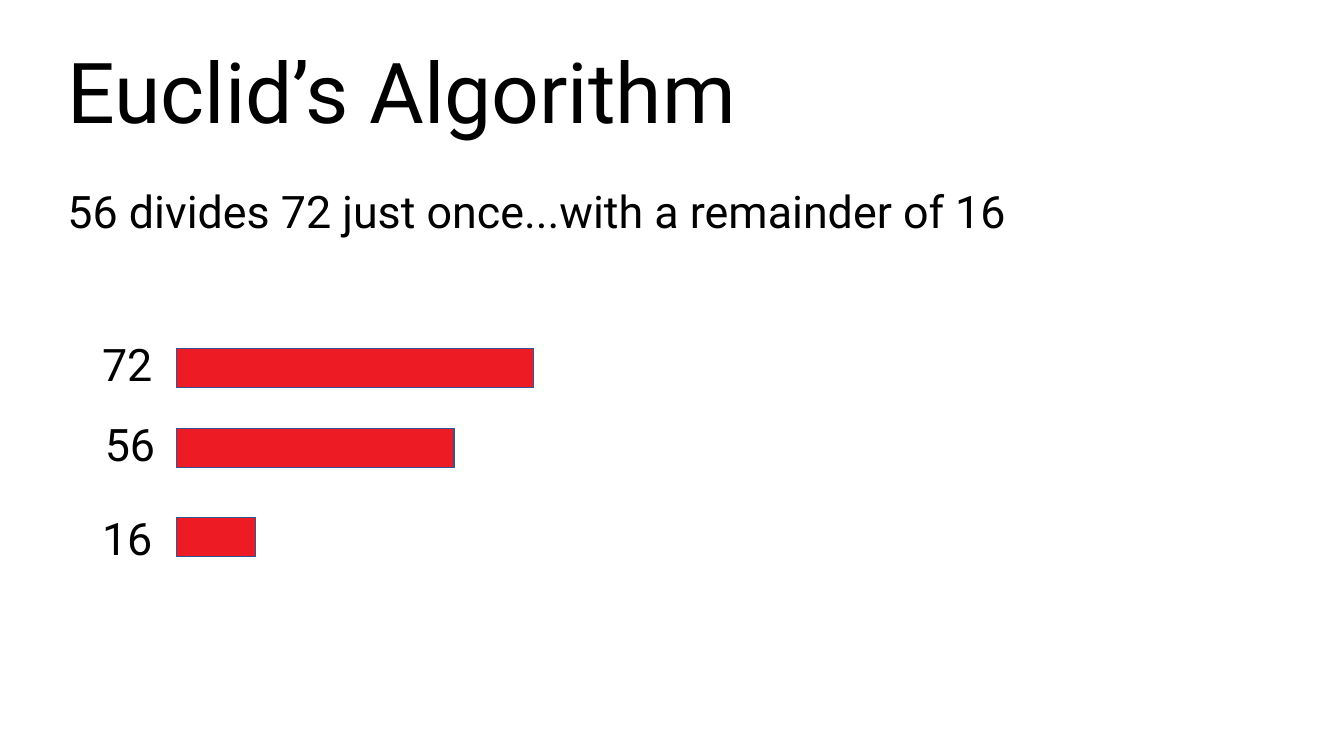
from dataclasses import dataclass

from lxml.etree import SubElement
from pptx import Presentation
from pptx.dml.color import RGBColor
from pptx.enum.shapes import MSO_SHAPE as Shape
from pptx.enum.text import MSO_ANCHOR as Anchor, MSO_AUTO_SIZE as AutoSize, PP_ALIGN as Align
from pptx.oxml.ns import qn
from pptx.util import Pt


@dataclass(frozen=True)
class Theme:
    font: str = "Roboto"
    title_size: int = 60
    text_size: int = 32
    ink: RGBColor = RGBColor(0x00, 0x00, 0x00)
    bar: RGBColor = RGBColor(0xED, 0x1C, 0x24)
    outline: RGBColor = RGBColor(0x32, 0x54, 0x91)


THEME = Theme()


def place(shape, left, top, width, height):
    shape.left, shape.top = Pt(left), Pt(top)
    shape.width, shape.height = Pt(width), Pt(height)


def write(shape, text, size, align=Align.LEFT):
    frame = shape.text_frame
    frame.word_wrap = True
    frame.auto_size = AutoSize.NONE
    frame.vertical_anchor = Anchor.TOP
    para = frame.paragraphs[0]
    para.alignment = align
    para.space_before = Pt(0)
    span = para.add_run()
    span.text = text
    span.font.name = THEME.font
    span.font.size = Pt(size)
    span.font.color.rgb = THEME.ink


def add_title(page, text, box):
    title = page.shapes.title
    place(title, *box)
    write(title, text, THEME.title_size)


def add_statement(page, text, box):
    body = page.placeholders[1]
    place(body, *box)
    # Plain paragraph: no bullet and no hanging indent
    props = body.text_frame.paragraphs[0]._p.get_or_add_pPr()
    props.set("marL", "0")
    props.set("indent", "0")
    SubElement(props, qn("a:buNone"))
    write(body, text, THEME.text_size)


def add_number_bars(page, rows, box):
    """Draw each number as a label and a bar of proportional length."""
    left, top, width, height = box
    label_width, label_height = 77, 46
    bar_left, bar_height = 87, 28
    unit = (width - bar_left) / max(number for number, *_ in rows)
    for number, label_shift, label_top, bar_top in rows:
        # Label
        label = page.shapes.add_textbox(
            Pt(left + label_shift), Pt(top + label_top), Pt(label_width), Pt(label_height))
        write(label, str(number), THEME.text_size, Align.RIGHT)
        # Bar
        bar = page.shapes.add_shape(
            Shape.RECTANGLE, Pt(left + bar_left), Pt(top + bar_top),
            Pt(number * unit), Pt(bar_height))
        bar.shadow.inherit = False
        bar.fill.solid()
        bar.fill.fore_color.rgb = THEME.bar
        bar.line.color.rgb = THEME.outline
        bar.line.width = Pt(1)


def main():
    deck = Presentation()
    deck.slide_width, deck.slide_height = Pt(960), Pt(540)
    page = deck.slides.add_slide(deck.slide_layouts[1])

    add_title(page, "Euclid’s Algorithm", (41, 24.5, 662, 80))
    add_statement(page, "56 divides 72 just once...with a remainder of 16",
                  (41, 127.5, 873, 46))
    # Number, label shift, label top, bar top
    rows = [(72, 0, 0, 12), (56, 2, 57, 69), (16, 0, 124, 132.5)]
    add_number_bars(page, rows, (39, 237, 342, 170))

    deck.save("out.pptx")


if __name__ == "__main__":
    main()
